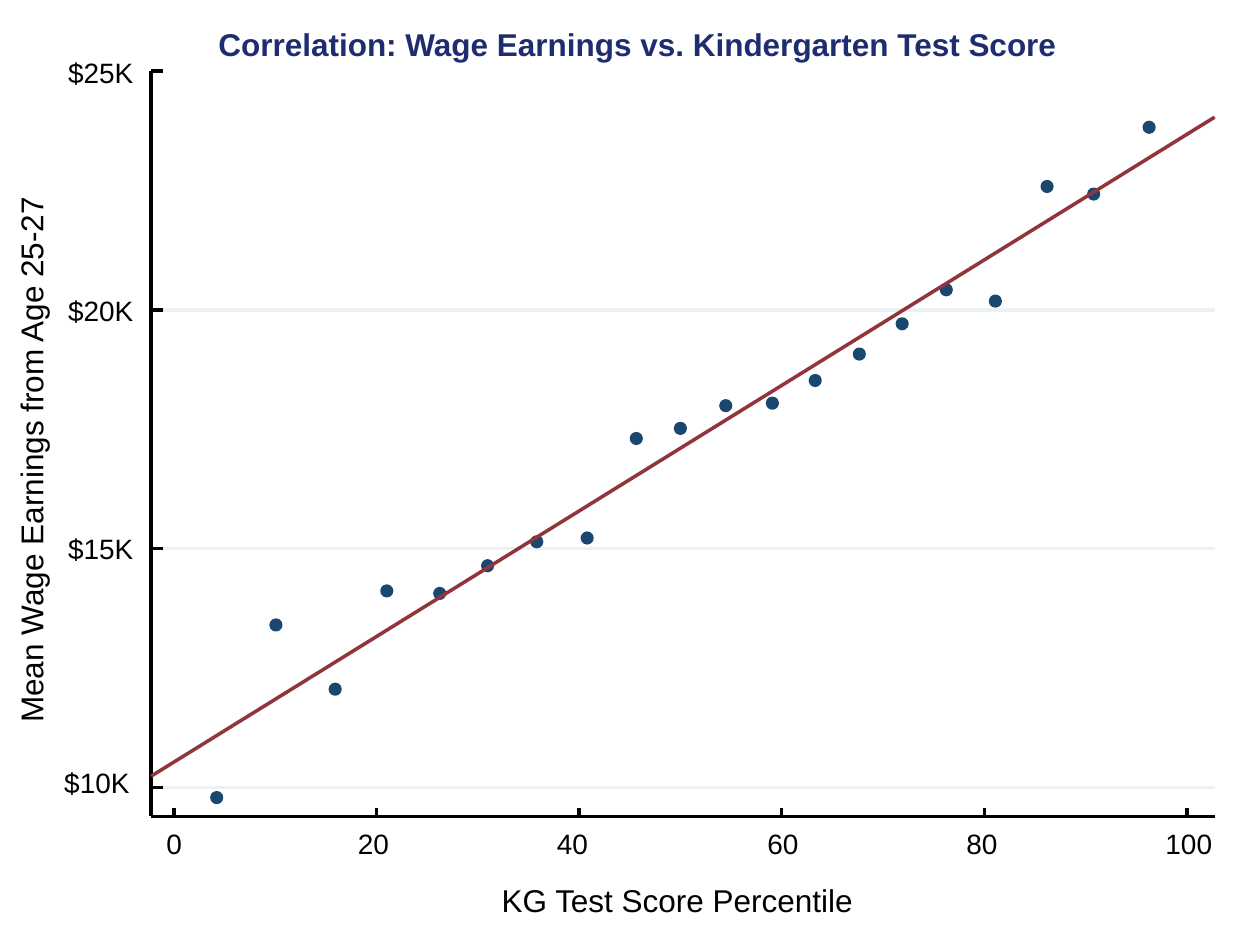
"""Build a slide with a scatter of wage earnings against kindergarten test scores."""
from lxml import etree
from pptx import Presentation
from pptx.dml.color import RGBColor
from pptx.enum.shapes import MSO_CONNECTOR, MSO_SHAPE
from pptx.enum.text import MSO_AUTO_SIZE, PP_ALIGN
from pptx.oxml.ns import qn
from pptx.util import Inches, Pt

STRAIGHT = MSO_CONNECTOR.STRAIGHT
OVAL = MSO_SHAPE.OVAL
LEFT, CENTER = PP_ALIGN.LEFT, PP_ALIGN.CENTER

COLORS = {"title": "1E2D70", "ink": "000000", "grid": "EAF2F3",
          "dot": "1A476F", "trend": "90353B"}
FONT = "Arial"

TITLE = ("Correlation: Wage Earnings vs. Kindergarten Test Score", 1.7, 0.2, 6.72)
X_TITLE = ("KG Test Score Percentile", 1.23, 6.99, 8.29)
Y_TITLE = ("Mean Wage Earnings from Age 25-27", -2.59, 3.5, 5.67)
X_LABELS = [("0", 1.32, 0.12), ("20", 2.84, 0.25), ("40", 4.42, 0.25),
            ("60", 6.09, 0.25), ("80", 7.67, 0.25), ("100", 9.25, 0.37)]
Y_LABELS = [("$10K", 0.51, 6.08), ("$15K", 0.54, 4.22),
            ("$20K", 0.54, 2.33), ("$25K", 0.54, 0.44)]
DOTS = [(1.68, 6.29), (2.15, 4.92), (2.62, 5.43), (3.03, 4.65), (3.45, 4.67),
        (3.83, 4.45), (4.22, 4.26), (4.62, 4.23), (5.01, 3.44), (5.36, 3.36),
        (5.72, 3.18), (6.09, 3.16), (6.43, 2.98), (6.78, 2.77), (7.12, 2.53),
        (7.47, 2.26), (7.86, 2.35), (8.27, 1.44), (8.64, 1.5), (9.08, 0.97)]

PLOT_LEFT, PLOT_RIGHT, PLOT_TOP, PLOT_BOTTOM = 1.2, 9.64, 0.56, 6.48
TREND = (PLOT_RIGHT, 0.93, PLOT_LEFT, 6.16)
DOT_SIZE = 0.08
X_TICKS = [1.38 + 1.608 * i for i in range(len(X_LABELS))]
Y_TICKS = [6.25 - 1.895 * i for i in range(len(Y_LABELS))]


def color(name):
    return RGBColor.from_string(COLORS[name])


def add_text(slide, text, left, top, width, size=16, name="ink",
             align=LEFT, bold=False, wrap=False, rotation=0):
    height = 0.3 if size == 18 else 0.27
    shape = slide.shapes.add_textbox(Inches(left), Inches(top), Inches(width), Inches(height))
    shape.rotation = rotation
    frame = shape.text_frame
    frame.margin_left = frame.margin_top = frame.margin_right = frame.margin_bottom = 0
    frame.word_wrap = wrap
    frame.auto_size = MSO_AUTO_SIZE.SHAPE_TO_FIT_TEXT
    paragraph = frame.paragraphs[0]
    paragraph.text = text
    paragraph.alignment = align
    paragraph.font.name = FONT
    paragraph.font.size = Pt(size)
    paragraph.font.bold = bold
    paragraph.font.color.rgb = color(name)


def add_line(slide, x1, y1, x2, y2, name="ink", width=0):
    connector = slide.shapes.add_connector(
        STRAIGHT, Inches(x1), Inches(y1), Inches(x2), Inches(y2))
    connector.line.color.rgb = color(name)
    connector.line.width = Pt(width)
    etree.SubElement(connector._element.spPr, qn("a:effectLst"))


def add_dot(group, left, top):
    dot = group.shapes.add_shape(
        OVAL, Inches(left), Inches(top), Inches(DOT_SIZE), Inches(DOT_SIZE))
    dot.shadow.inherit = False
    dot.fill.solid()
    dot.fill.fore_color.rgb = color("dot")
    dot.line.color.rgb = color("dot")
    dot.line.width = Pt(1.75)


def main():
    presentation = Presentation()
    presentation.slide_width = Inches(10)
    presentation.slide_height = Inches(7.5)
    slide = presentation.slides.add_slide(presentation.slide_layouts[6])

    add_text(slide, *TITLE, size=18, name="title", align=CENTER, bold=True)
    add_text(slide, *X_TITLE, size=18, align=CENTER, wrap=True)
    add_text(slide, *Y_TITLE, size=18, align=CENTER, wrap=True, rotation=270)
    for text, left, width in X_LABELS:
        add_text(slide, text, left, 6.56, width)
    for text, left, top in Y_LABELS:
        add_text(slide, text, left, top, 0.52)

    for y in Y_TICKS[:-1]:
        add_line(slide, PLOT_LEFT, y, PLOT_RIGHT, y, "grid")
    add_line(slide, PLOT_LEFT, PLOT_BOTTOM, PLOT_LEFT, PLOT_TOP)
    add_line(slide, PLOT_LEFT, PLOT_BOTTOM, PLOT_RIGHT, PLOT_BOTTOM)
    for x in X_TICKS:
        add_line(slide, x, PLOT_BOTTOM, x, PLOT_BOTTOM - 0.07)
    for y in Y_TICKS:
        add_line(slide, PLOT_LEFT, y, PLOT_LEFT + 0.09, y)

    dots = slide.shapes.add_group_shape()
    for left, top in DOTS:
        add_dot(dots, left, top)
    add_line(slide, *TREND, name="trend", width=2)

    presentation.save("out.pptx")


if __name__ == "__main__":
    main()
